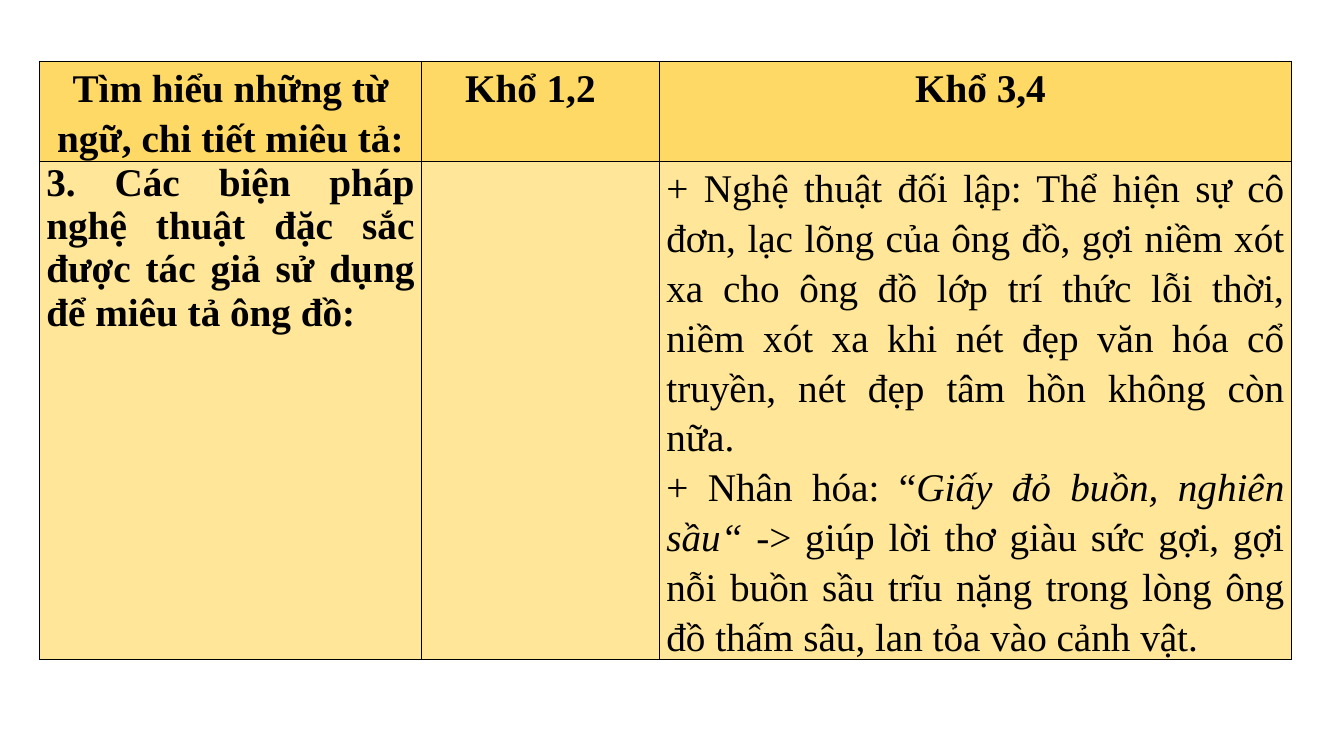
from lxml import etree
from pptx import Presentation
from pptx import util as u
from pptx.dml.color import RGBColor
from pptx.enum import text
from pptx.oxml.ns import qn

PX = 9144  # EMU in one px, 100 px to the inch
BLACK, GOLD, CREAM = "000000", "FFD966", "FFE699"
CENTER, JUSTIFY = text.PP_ALIGN.CENTER, text.PP_ALIGN.JUSTIFY


def px(length):
    return u.Emu(length * PX)


def color(hex_string):
    return RGBColor.from_string(hex_string)


class SlideBuilder:
    font_name = "Times New Roman"
    font_size = 28
    side_margin = 7

    def __init__(self, presentation):
        self.slide = presentation.slides.add_slide(presentation.slide_layouts[6])

    def table(self, left, top, height, columns, rows):
        shape = self.slide.shapes.add_table(
            len(rows), len(columns), px(left), px(top), px(sum(columns)), px(height))
        table = shape.table
        table.first_row = table.horz_banding = False
        for column, width in zip(table.columns, columns):
            column.width = px(width)
        for row, row_height in zip(table.rows, rows):
            row.height = px(row_height)
        shape.height = px(height)
        return table

    def cell(self, cell, fill, extra_left=0, extra_right=0):
        """Style a cell; the extra margins push its text sideways."""
        cell.margin_left = px(self.side_margin + extra_left)
        cell.margin_right = px(self.side_margin + extra_right)
        cell.margin_top = cell.margin_bottom = 0
        self.borders(cell)
        cell.fill.solid()
        cell.fill.fore_color.rgb = color(fill)

    def borders(self, cell, line_color=BLACK, points=1):
        properties = cell._tc.get_or_add_tcPr()
        for side in ("lnL", "lnR", "lnT", "lnB"):
            line = etree.SubElement(properties, qn(f"a:{side}"), w=str(u.Pt(points)))
            fill = etree.SubElement(line, qn("a:solidFill"))
            etree.SubElement(fill, qn("a:srgbClr"), val=line_color)

    def add_text(self, frame, paragraphs, align=JUSTIFY, spacing=1.15, bold=False):
        """Each paragraph is a list of (words, italic) runs."""
        for index, runs in enumerate(paragraphs):
            paragraph = frame.add_paragraph() if index else frame.paragraphs[0]
            paragraph.alignment = align
            paragraph.line_spacing = spacing
            for words, italic in runs:
                run = paragraph.add_run()
                run.text = words
                run.font.name = self.font_name
                run.font.size = u.Pt(self.font_size)
                run.font.bold, run.font.italic = bold, italic
                run.font.color.rgb = color(BLACK)


HEADINGS = [
    ("Tìm hiểu những từ ngữ, chi tiết miêu tả:", 0, 0),
    ("Khổ 1,2", 0, 20),
    ("Khổ 3,4", 10, 0),
]
QUESTION = [[("3. Các biện pháp nghệ thuật đặc sắc được tác giả sử dụng "
              "để miêu tả ông đồ:", False)]]
ANSWER = [
    [("+ Nghệ thuật đối lập: Thể hiện sự cô đơn, lạc lõng của ông đồ, gợi niềm "
      "xót xa cho ông đồ lớp trí thức lỗi thời, niềm xót xa khi nét đẹp văn hóa "
      "cổ truyền, nét đẹp tâm hồn không còn nữa.", False)],
    [("+ Nhân hóa: “", False),
     ("Giấy đỏ buồn, nghiên sầu“ ", True),
     ("-> giúp lời thơ giàu sức gợi, gợi nỗi buồn sầu trĩu nặng trong lòng "
      "ông đồ thấm sâu, lan tỏa vào cảnh vật.", False)],
]


def main():
    presentation = Presentation()
    presentation.slide_width, presentation.slide_height = px(1333), px(750)
    builder = SlideBuilder(presentation)
    table = builder.table(39, 61, 644, columns=[379, 236, 627], rows=[65, 355])

    for column, (heading, extra_left, extra_right) in enumerate(HEADINGS):
        head, body = table.cell(0, column), table.cell(1, column)
        builder.cell(head, GOLD, extra_left, extra_right)
        builder.add_text(head.text_frame, [[(heading, False)]], align=CENTER, bold=True)
        builder.cell(body, CREAM)

    builder.add_text(table.cell(1, 0).text_frame, QUESTION, spacing=1.0, bold=True)
    builder.add_text(table.cell(1, 2).text_frame, ANSWER)
    presentation.save("out.pptx")


if __name__ == "__main__":
    main()
